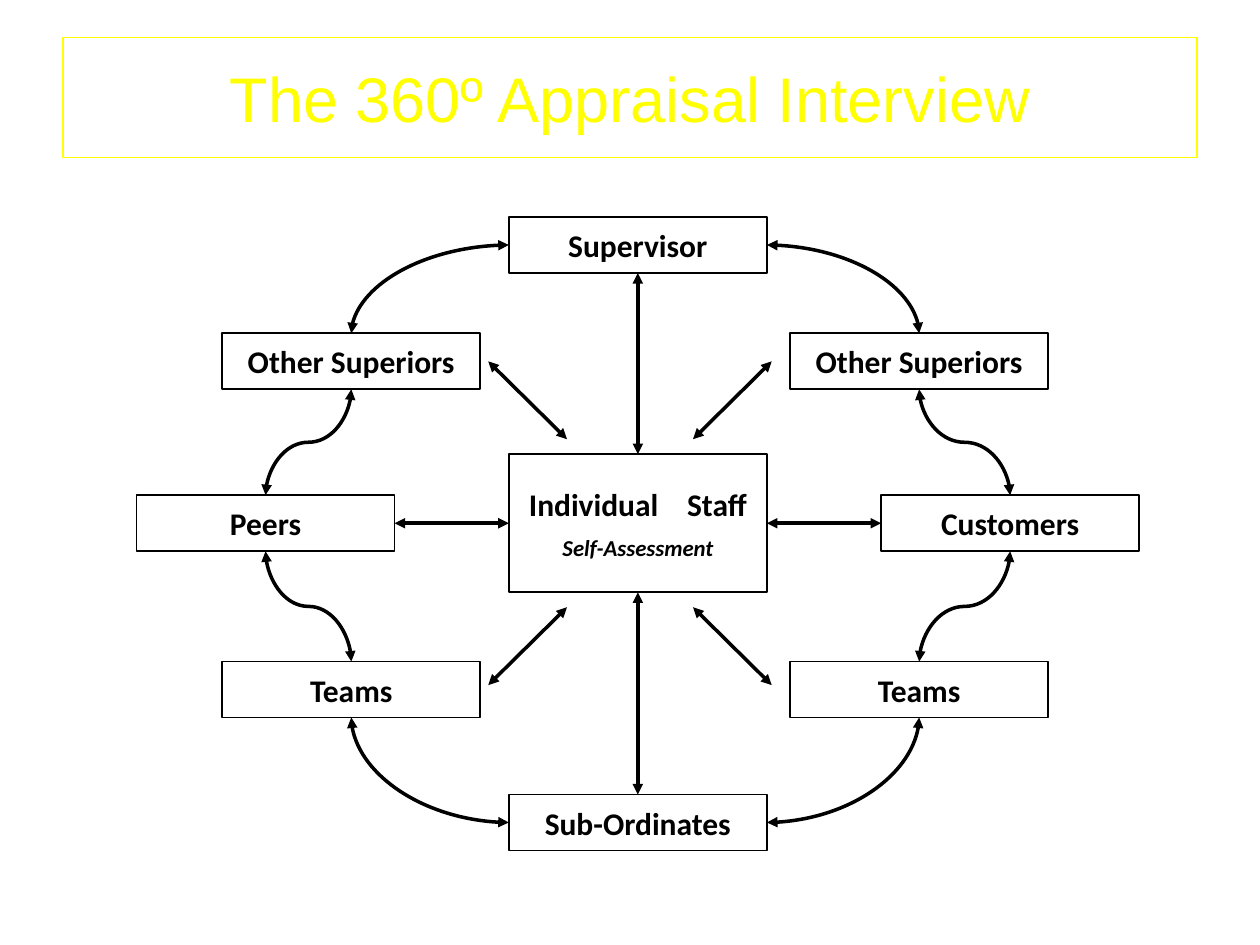
from dataclasses import dataclass

from pptx import Presentation
from pptx.dml.color import RGBColor
from pptx.enum.shapes import MSO_CONNECTOR as Link, MSO_SHAPE as Preset
from pptx.enum.text import MSO_ANCHOR as Anchor, PP_ALIGN as Align
from pptx.oxml.ns import qn
from pptx.oxml.xmlchemy import OxmlElement
from pptx.util import Pt


@dataclass(frozen=True)
class Theme:
    accent: RGBColor = RGBColor(0xFF, 0xFF, 0x00)
    ink: RGBColor = RGBColor(0x00, 0x00, 0x00)
    title_font: str = "Arial"
    body_font: str = "Calibri"
    title_size: float = 36
    label_size: float = 18
    note_size: float = 13
    border: float = 1
    arrow: float = 2


THEME = Theme()
TOP, LEFT, BOTTOM, RIGHT = range(4)  # connection sites of a rectangle


def style_span(span, size, font, color, bold=False, italic=False):
    span.font.size, span.font.name = Pt(size), font
    span.font.color.rgb = color
    span.font.bold, span.font.italic = bold, italic


def add_frame(page, left, top, width, height, color, border):
    """Unfilled rectangle with centred text."""
    box = page.shapes.add_shape(
        Preset.RECTANGLE, Pt(left), Pt(top), Pt(width), Pt(height))
    box.shadow.inherit = False
    box.fill.background()
    box.line.color.rgb, box.line.width = color, Pt(border)
    box.text_frame.word_wrap = True
    box.text_frame.vertical_anchor = Anchor.MIDDLE
    return box


def add_label(page, center, size, text):
    (x, y), (width, height) = center, size
    box = add_frame(page, x - width / 2, y - height / 2, width, height,
                    THEME.ink, THEME.border)
    para = box.text_frame.paragraphs[0]
    para.text, para.alignment = text, Align.CENTER
    for span in para.runs:
        style_span(span, THEME.label_size, THEME.body_font, THEME.ink, bold=True)
    return box


def add_arrow(page, kind, start=(0, 0), end=(0, 0)):
    """Connector with a triangle at both ends."""
    arrow = page.shapes.add_connector(kind, *(Pt(v) for v in (*start, *end)))
    arrow.line.color.rgb, arrow.line.width = THEME.ink, Pt(THEME.arrow)
    outline = arrow.line._get_or_add_ln()
    for tag in ("a:headEnd", "a:tailEnd"):
        tip = OxmlElement(tag)
        tip.set("type", "triangle")
        outline.append(tip)
    arrow.element.spPr.append(OxmlElement("a:effectLst"))
    return arrow


def join(page, kind, first, first_side, second, second_side):
    arrow = add_arrow(page, kind)
    arrow.begin_connect(first, first_side)
    arrow.end_connect(second, second_side)
    return arrow


def join_arc(page, first, first_side, second, second_side):
    """Quarter curve that leaves sideways and arrives vertically."""
    arrow = join(page, Link.CURVE, first, first_side, second, second_side)
    arrow.element.spPr.find(qn("a:prstGeom")).set("prst", "curvedConnector2")


def join_wave(page, upper, lower):
    """S curve from the bottom of one box to the top of the next."""
    arrow = join(page, Link.CURVE, upper, BOTTOM, lower, TOP)
    rightward = arrow.begin_x < arrow.end_x
    left, top, width, height = arrow.left, arrow.top, arrow.width, arrow.height
    # The preset runs sideways, so turn it a quarter about its centre
    arrow.left, arrow.top = left + (width - height) // 2, top + (height - width) // 2
    arrow.width, arrow.height = height, width
    frame = arrow.element.spPr.find(qn("a:xfrm"))
    frame.set("rot", "5400000")
    frame.set("flipH", "0")
    frame.set("flipV", "1" if rightward else "0")


def build_title(page, left, top, width, height):
    box = add_frame(page, left, top, width, height, THEME.accent, 0.75)
    para = box.text_frame.paragraphs[0]
    para.text, para.alignment = "The 360º Appraisal Interview", Align.CENTER
    style_span(para.runs[0], THEME.title_size, THEME.title_font, THEME.accent)


def build_hub(page, center, size):
    hub = add_label(page, center, size, "Individual")
    para = hub.text_frame.paragraphs[0]
    for text in (" ", "Staff"):
        span = para.add_run()
        span.text = text
        style_span(span, THEME.label_size, THEME.body_font, THEME.ink, bold=True)
    para.runs[1].font._element.set("spc", "1220")  # wide gap between the words
    note = hub.text_frame.add_paragraph()
    note.text, note.alignment = "Self-Assessment", Align.CENTER
    note.space_before = Pt(THEME.note_size / 2)
    style_span(note.runs[0], THEME.note_size, THEME.body_font, THEME.ink,
               bold=True, italic=True)
    return hub


def build_wheel(page, left, top, width, height):
    box_width, box_height = 147.5, 32
    middle = left + width / 2
    first, last = top + box_height / 2, top + height - box_height / 2
    upper, center, lower = top + 82.5, top + 175, top + 270
    outer_left, outer_right = left + box_width / 2, left + width - box_width / 2
    inner_left, inner_right = outer_left + 49, outer_right - 52

    # Boxes
    hub = build_hub(page, (middle, center), (box_width, 79))

    def place(x, y, text):
        return add_label(page, (x, y), (box_width, box_height), text)

    supervisor = place(middle, first, "Supervisor")
    subordinates = place(middle, last, "Sub-Ordinates")
    sides = (
        (LEFT, place(inner_left, upper, "Other Superiors"),
         place(outer_left, center, "Peers"), place(inner_left, lower, "Teams")),
        (RIGHT, place(inner_right, upper, "Other Superiors"),
         place(outer_right, center, "Customers"),
         place(inner_right, lower, "Teams")),
    )

    # Ring of curves and level spokes
    for side, superiors, partner, team in sides:
        join_arc(page, supervisor, side, superiors, TOP)
        join_wave(page, superiors, partner)
        join_wave(page, partner, team)
        join_arc(page, subordinates, side, team, BOTTOM)
        join(page, Link.STRAIGHT, hub, side, partner, LEFT + RIGHT - side)

    # Upright spokes
    join(page, Link.STRAIGHT, hub, TOP, supervisor, BOTTOM)
    join(page, Link.STRAIGHT, hub, BOTTOM, subordinates, TOP)

    # Diagonal spokes, free at both ends
    axis = middle - 4.5
    for across in (-1, 1):
        for down in (-1, 1):
            add_arrow(page, Link.STRAIGHT,
                      (axis + across * 36, center + down * 48),
                      (axis + across * 81, center + down * 92.5))


def main():
    deck = Presentation()
    deck.slide_width, deck.slide_height = Pt(720), Pt(540)
    page = deck.slides.add_slide(deck.slide_layouts[6])
    build_title(page, 36, 21.6, 648, 68.4)
    build_wheel(page, 78, 124, 573, 362)
    deck.save("out.pptx")


if __name__ == "__main__":
    main()
